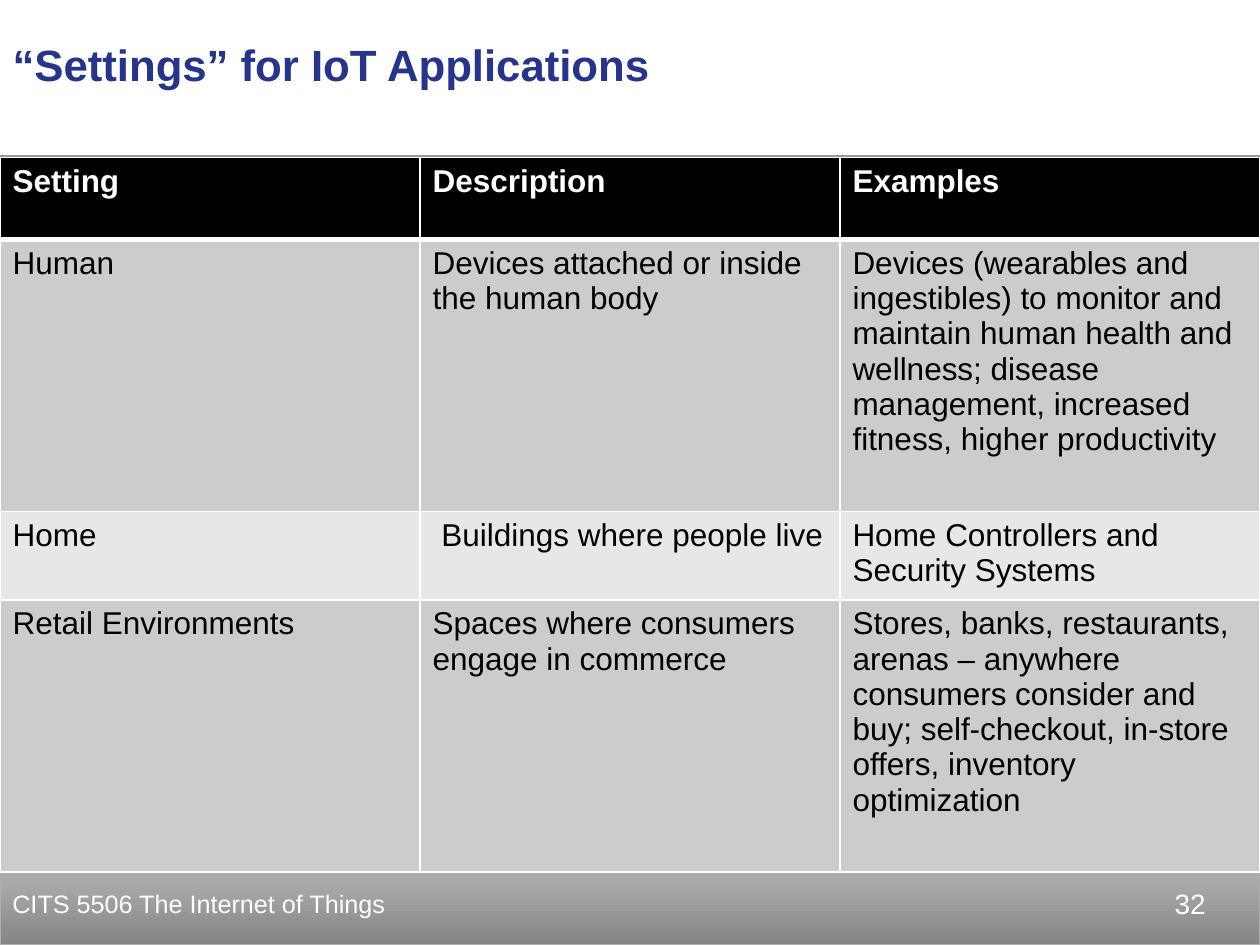
from dataclasses import dataclass

from lxml import etree
from pptx import Presentation
from pptx.dml.color import RGBColor
from pptx.enum import shapes, text
from pptx.oxml import ns
from pptx.util import Pt


@dataclass(frozen=True)
class Theme:
    font: str = "Arial"
    backdrop: str = "999999"
    white: str = "FFFFFF"
    black: str = "000000"
    navy: str = "27348B"
    bands: tuple = ("CCCCCC", "E7E7E7")
    bar_dark: str = "858585"
    bar_light: str = "ACACAC"
    bar_line: str = "AEAEAE"
    title_size: float = 25
    cell_size: float = 18
    course_size: float = 14.4
    number_size: float = 16


THEME = Theme()
WIDTH, HEIGHT = 720, 540
SETTINGS = [
    ("Setting", "Description", "Examples"),
    ("Human", "Devices attached or inside the human body",
     "Devices (wearables and ingestibles) to monitor and maintain human health "
     "and wellness; disease management, increased fitness, higher productivity"),
    ("Home", " Buildings where people live", "Home Controllers and Security Systems"),
    ("Retail Environments", "Spaces where consumers engage in commerce",
     "Stores, banks, restaurants, arenas – anywhere consumers consider and buy; "
     "self-checkout, in-store offers, inventory optimization"),
]
ROW_HEIGHTS = (46.8, 155.6, 50.4, 155.6)


def points(box):
    return [Pt(length) for length in box]


def colour(value):
    return RGBColor.from_string(value)


def write(frame, words, size, ink, bold=False, align=text.PP_ALIGN.LEFT,
          anchor=text.MSO_ANCHOR.TOP):
    frame.word_wrap = True
    frame.vertical_anchor = anchor
    paragraph = frame.paragraphs[0]
    paragraph.alignment = align
    paragraph.space_before = Pt(0)
    run = paragraph.add_run()
    run.text = words
    for key, value in {"name": THEME.font, "size": Pt(size), "bold": bold}.items():
        setattr(run.font, key, value)
    run.font.color.rgb = colour(ink)


def add_panel(slide, box):
    panel = slide.shapes.add_shape(shapes.MSO_SHAPE.RECTANGLE, *points(box))
    panel.shadow.inherit = False
    panel.fill.solid()
    panel.fill.fore_color.rgb = colour(THEME.white)
    panel.line.fill.background()
    return panel


def add_title(slide, box, words):
    title = slide.shapes.title
    for side, value in zip(("left", "top", "width", "height"), points(box)):
        setattr(title, side, value)
    write(title.text_frame, words, THEME.title_size, THEME.navy, bold=True)
    # Bring the title in front of the white panels
    title.element.getparent().append(title.element)


def add_footer(slide, box, course, number):
    left, top, width, height = box
    bar = add_panel(slide, box)
    bar.fill.gradient()
    bar.fill.gradient_angle = 90
    stops = ((0, THEME.bar_dark), (0.8, THEME.bar_light))
    for stop, (position, shade) in zip(bar.fill.gradient_stops, stops):
        stop.position = position
        stop.color.rgb = colour(shade)
    bar.line.color.rgb = colour(THEME.bar_line)
    bar.line.width = Pt(0.75)
    write(bar.text_frame, course, THEME.course_size, THEME.white,
          anchor=text.MSO_ANCHOR.MIDDLE)

    # Page number, set in from the right edge
    number_width, margin = 168, 24
    page = slide.shapes.add_textbox(
        *points((left + width - margin - number_width, top, number_width, height)))
    write(page.text_frame, number, THEME.number_size, THEME.white,
          align=text.PP_ALIGN.RIGHT, anchor=text.MSO_ANCHOR.MIDDLE)


def set_borders(cell, widths):
    properties = cell._tc.get_or_add_tcPr()
    for index, (side, width) in enumerate(widths.items()):
        line = etree.Element(ns.qn(f"a:ln{side}"), w=str(Pt(width)))
        fill = etree.SubElement(line, ns.qn("a:solidFill"))
        etree.SubElement(fill, ns.qn("a:srgbClr"), val=THEME.white)
        properties.insert(index, line)


def add_settings_table(slide, box, rows, heights):
    table = slide.shapes.add_table(len(rows), len(rows[0]), *points(box)).table
    for column in table.columns:
        column.width = Pt(box[2] / len(rows[0]))
    for r, (entries, height) in enumerate(zip(rows, heights)):
        table.rows[r].height = Pt(height)
        heading = r == 0
        shade = THEME.black if heading else THEME.bands[(r - 1) % 2]
        ink = THEME.white if heading else THEME.black
        # A heavier rule parts the heading from the body
        widths = {"L": 1, "R": 1, "T": 3 if r == 1 else 1, "B": 3 if heading else 1}
        for c, words in enumerate(entries):
            cell = table.cell(r, c)
            write(cell.text_frame, words, THEME.cell_size, ink, bold=heading)
            cell.fill.solid()
            cell.fill.fore_color.rgb = colour(shade)
            set_borders(cell, widths)


def main():
    deck = Presentation()
    deck.slide_width, deck.slide_height = Pt(WIDTH), Pt(HEIGHT)
    slide = deck.slides.add_slide(deck.slide_layouts[5])
    slide.background.fill.solid()
    slide.background.fill.fore_color.rgb = colour(THEME.backdrop)

    # White header and body, with a thin grey gap between them
    body_top, footer_top = 90, 492
    add_panel(slide, (0, 0, WIDTH, 88.6))
    add_panel(slide, (0, body_top, WIDTH, 427.7))

    add_title(slide, (0, 18, 546, 66), "“Settings” for IoT Applications")
    add_footer(slide, (0, footer_top, WIDTH, HEIGHT - footer_top),
               "CITS 5506 The Internet of Things", "32")
    add_settings_table(slide, (0, body_top, WIDTH, sum(ROW_HEIGHTS)),
                       SETTINGS, ROW_HEIGHTS)
    deck.save("out.pptx")


if __name__ == "__main__":
    main()
